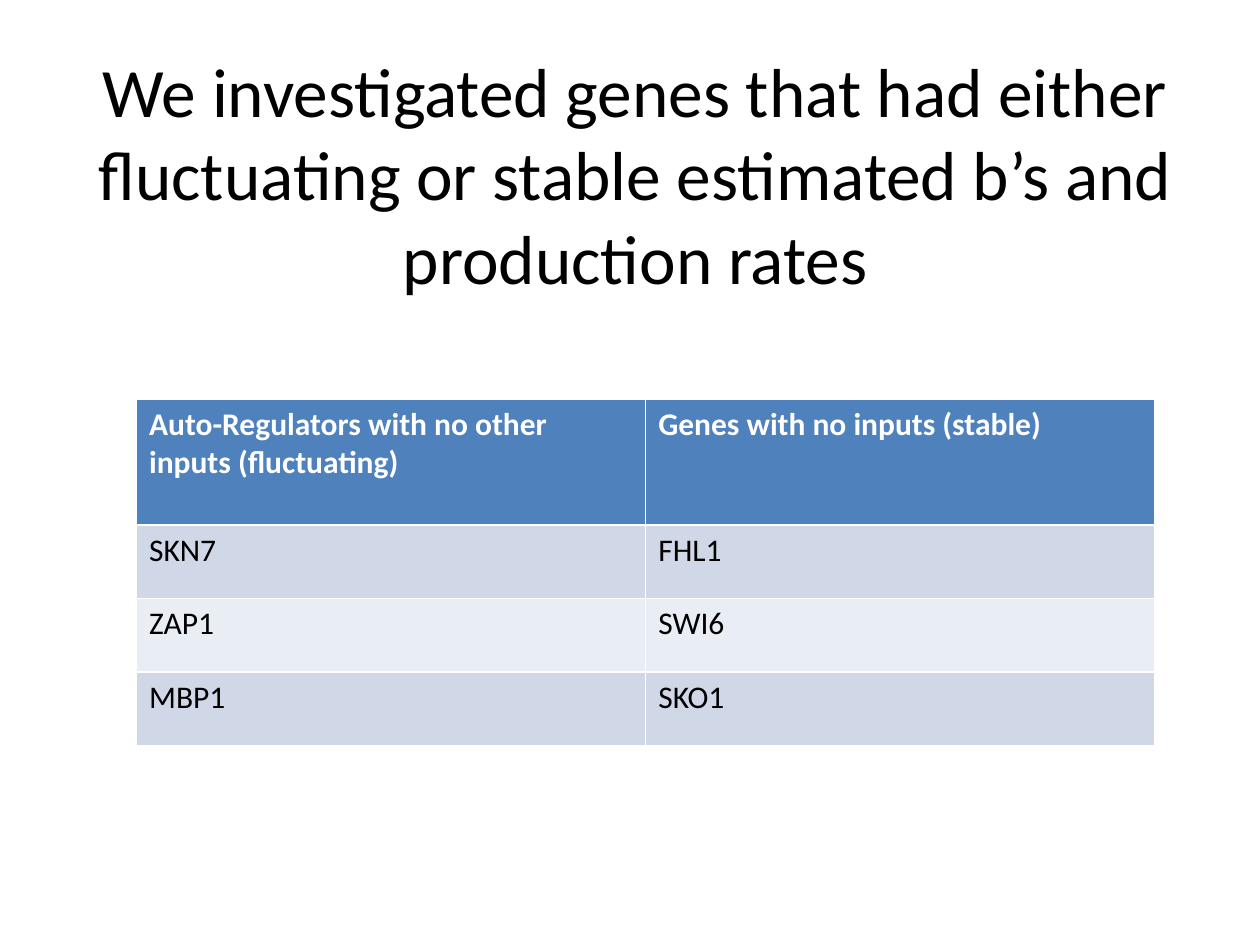
from pptx import Presentation
from pptx.dml.color import RGBColor
from pptx.enum.text import MSO_ANCHOR, MSO_AUTO_SIZE, PP_ALIGN
from pptx.util import Pt

BLACK = RGBColor(0x00, 0x00, 0x00)
WHITE = RGBColor(0xFF, 0xFF, 0xFF)
HEADER_BLUE = RGBColor(0x4F, 0x81, 0xBD)
BAND_DARK = RGBColor(0xD0, 0xD8, 0xE8)
BAND_LIGHT = RGBColor(0xE9, 0xED, 0xF4)

GENE_ROWS = [
    ("Auto-Regulators with no other inputs (fluctuating)", "Genes with no inputs (stable)"),
    ("SKN7", "FHL1"),
    ("ZAP1", "SWI6"),
    ("MBP1", "SKO1"),
]
HEADER_HEIGHT, ROW_HEIGHT, COLUMN_WIDTH = 72, 42, 291


def format_text(frame, size, color, bold=False):
    for para in frame.paragraphs:
        for span in para.runs:
            span.font.name = "Calibri"
            span.font.size = Pt(size)
            span.font.bold = bold
            span.font.color.rgb = color


deck = Presentation()
deck.slide_width, deck.slide_height = Pt(720), Pt(540)
page = deck.slides.add_slide(deck.slide_layouts[5])

# Title
title = page.shapes.title
title.left, title.top, title.width, title.height = Pt(39), Pt(54), Pt(648), Pt(90)
frame = title.text_frame
frame.text = ("We investigated genes that had either fluctuating "
              "or stable estimated b’s and production rates")
frame.word_wrap = True
frame.auto_size = MSO_AUTO_SIZE.NONE
frame.vertical_anchor = MSO_ANCHOR.MIDDLE
frame.paragraphs[0].alignment = PP_ALIGN.CENTER
format_text(frame, 39.6, BLACK)

# Gene table; the default table style supplies the white cell borders
table_height = HEADER_HEIGHT + ROW_HEIGHT * (len(GENE_ROWS) - 1)
gene_table = page.shapes.add_table(
    len(GENE_ROWS), 2, Pt(78), Pt(228), Pt(2 * COLUMN_WIDTH), Pt(table_height)).table
for column in gene_table.columns:
    column.width = Pt(COLUMN_WIDTH)

for row_index, labels in enumerate(GENE_ROWS):
    is_header = row_index == 0
    gene_table.rows[row_index].height = Pt(HEADER_HEIGHT if is_header else ROW_HEIGHT)
    band = BAND_DARK if row_index % 2 else BAND_LIGHT
    for column_index, label in enumerate(labels):
        cell = gene_table.cell(row_index, column_index)
        cell.text_frame.text = label
        cell.fill.solid()
        cell.fill.fore_color.rgb = HEADER_BLUE if is_header else band
        format_text(cell.text_frame, 18, WHITE if is_header else BLACK, bold=is_header)

deck.save("out.pptx")
